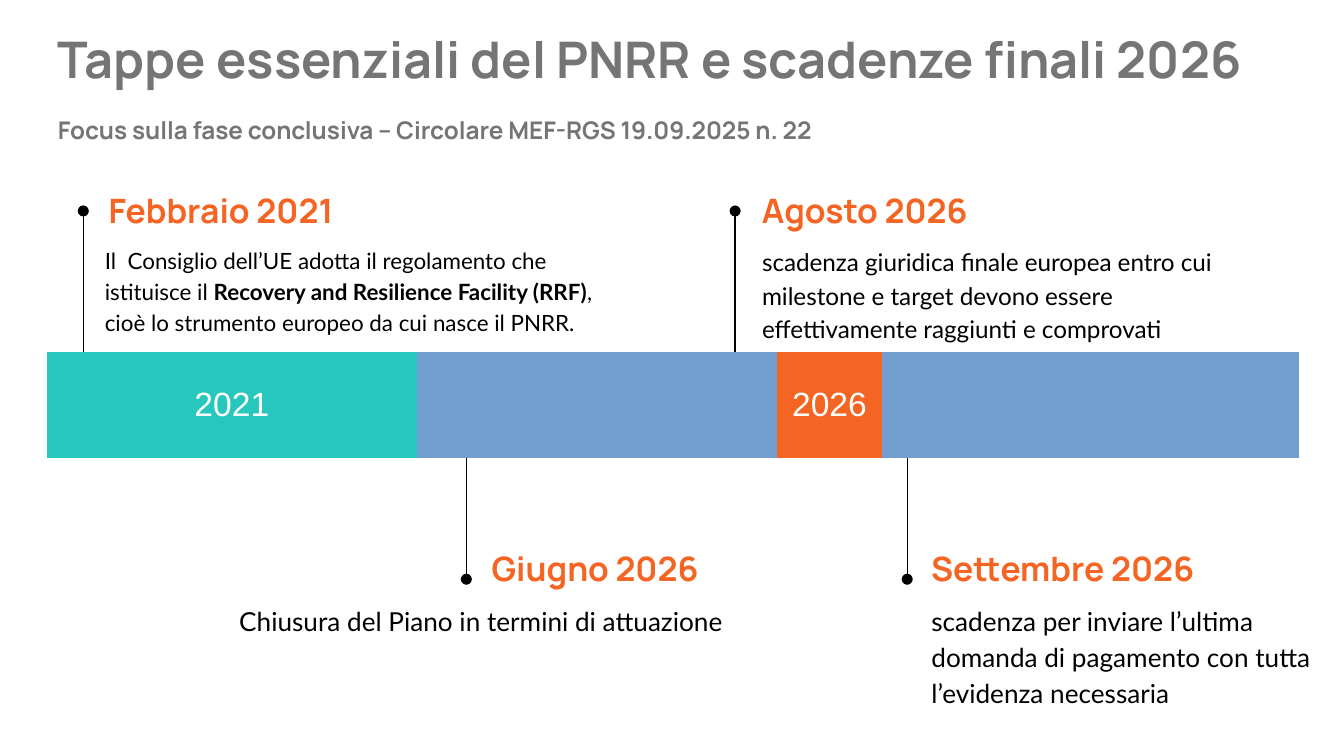
import pptx
import pptx.dml.color
import pptx.enum.shapes
import pptx.enum.text
import pptx.oxml.ns
import pptx.util
from lxml import etree

Inches, Pt = pptx.util.Inches, pptx.util.Pt
Align, Anchor = pptx.enum.text.PP_ALIGN, pptx.enum.text.MSO_ANCHOR
qn = pptx.oxml.ns.qn

GREY, ORANGE, TEAL = "757575", "F46524", "27C7BD"
BLACK, WHITE = "000000", "FFFFFF"
NO_TABLE_STYLE = "{2D5ABB26-0587-4C30-8999-92F81FD0307C}"


def rgb(value):
    return pptx.dml.color.RGBColor.from_string(value)


class Deck:
    heading_font, body_font, table_font = "Manrope", "Lato", "Arial"
    inset = Inches(0.1)

    def __init__(self, prs, layout):
        self.s = prs.slides.add_slide(prs.slide_layouts[layout])

    def place(self, sp, left, top, width, height, anchor=Anchor.TOP):
        sp.left, sp.top = Inches(left), Inches(top)
        sp.width, sp.height = Inches(width), Inches(height)
        tf = sp.text_frame
        tf.word_wrap = True
        tf.auto_size = pptx.enum.text.MSO_AUTO_SIZE.NONE
        tf.vertical_anchor = anchor
        tf.margin_left = tf.margin_right = self.inset
        tf.margin_top = tf.margin_bottom = self.inset
        return tf

    def run(self, p, text, size, font, color, bold=False):
        r = p.add_run()
        r.text = text
        r.font.size, r.font.name, r.font.bold = Pt(size), font, bold
        r.font.color.rgb = rgb(color)

    def title(self, text, subtitle):
        tf = self.place(self.s.shapes.title, 0.33, 0.11, 9.32, 0.91)
        p = tf.paragraphs[0]
        p.alignment = Align.LEFT
        self.run(p, text, 27, self.heading_font, GREY, True)
        p = tf.add_paragraph()
        p.alignment, p.line_spacing, p.space_before = Align.LEFT, 1.15, Pt(12)
        self.run(p, subtitle, 13, self.heading_font, GREY, True)

    def heading(self, text, left, top):
        sp = self.s.shapes.add_textbox(0, 0, 0, 0)
        tf = self.place(sp, left, top, 2.57, 0.43, Anchor.MIDDLE)
        self.run(tf.paragraphs[0], text, 18, self.heading_font, ORANGE, True)

    def body(self, idx, runs, size, left, top, width, height):
        tf = self.place(self.s.placeholders[idx], left, top, width, height)
        p = tf.paragraphs[0]
        p.alignment, p.line_spacing = Align.LEFT, 1.15
        p.space_before, p.space_after = Pt(0), Pt(16)
        # No bullet and no hanging indent
        pPr = p._p.get_or_add_pPr()
        pPr.set("marL", "0")
        pPr.set("indent", "0")
        etree.SubElement(pPr, qn("a:buNone"))
        for text, bold in runs:
            self.run(p, text, size, self.body_font, BLACK, bold)

    def band(self, left, top, height, widths, segments):
        frame = self.s.shapes.add_table(1, len(widths), Inches(left), Inches(top),
                                        Inches(sum(widths)), Inches(height))
        table = frame.table
        table.first_row = table.horz_banding = False
        table._tbl.tblPr.find(qn("a:tableStyleId")).text = NO_TABLE_STYLE
        for column, width in zip(table.columns, widths):
            column.width = Inches(width)
        first = 0
        for text, span, color in segments:
            cell = table.cell(0, first)
            cell.merge(table.cell(0, first + span - 1))
            cell.fill.solid()
            cell.fill.fore_color.rgb = rgb(color)
            cell.vertical_anchor = Anchor.MIDDLE
            cell.margin_left = cell.margin_right = self.inset
            cell.margin_top = cell.margin_bottom = self.inset
            p = cell.text_frame.paragraphs[0]
            p.alignment = Align.CENTER
            self.run(p, text, 18, self.table_font, WHITE)
            first += span

    def marker(self, x, start, end):
        line = self.s.shapes.add_connector(pptx.enum.shapes.MSO_CONNECTOR.STRAIGHT,
                                           Inches(x), Inches(start), Inches(x), Inches(end))
        line.line.color.rgb = rgb(BLACK)
        line.line.width = Pt(0.75)
        etree.SubElement(line.line._get_or_add_ln(), qn("a:tailEnd"), type="oval")
        etree.SubElement(line._element.spPr, qn("a:effectLst"))


def main():
    prs = pptx.Presentation()
    prs.slide_width = Inches(10)
    prs.slide_height = prs.slide_width * 9 // 16
    deck = Deck(prs, 4)  # title and four body placeholders

    deck.title("Tappe essenziali del PNRR e scadenze finali 2026",
               "Focus sulla fase conclusiva – Circolare MEF-RGS 19.09.2025 n. 22")

    # Timeline band: ten equal columns around a narrow and a wide one
    top, height = 2.62, 0.79
    narrow, wide = 0.42, 1.13
    step = (9.32 - narrow - wide) / 10
    widths = [step] * 3 + [narrow, wide] + [step] * 7
    deck.band(0.35, top, height, widths, [("2021", 4, TEAL), ("2026", 8, ORANGE)])

    # Milestones: above?, marker x, heading, heading left, runs, size, body left, width, height
    milestones = [
        (True, 0.62, "Febbraio 2021", 0.71,
         [("Il  Consiglio dell’UE adotta il regolamento che istituisce il ", False),
          ("Recovery and Resilience Facility (RRF)", True),
          (", cioè lo strumento europeo da cui nasce il PNRR.", False)],
         12, 0.68, 3.93, 0.91),
        (False, 3.47, "Giugno 2026", 3.56,
         [("Chiusura del Piano in termini di attuazione", False)],
         14, 1.68, 4.41, 0.63),
        (True, 5.47, "Agosto 2026", 5.57,
         [("scadenza giuridica finale europea entro cui milestone e target devono "
           "essere effettivamente raggiunti e comprovati", False)],
         13, 5.57, 3.93, 0.63),
        (False, 6.75, "Settembre 2026", 6.83,
         [("scadenza per inviare l’ultima domanda di pagamento con tutta "
           "l’evidenza necessaria", False)],
         14, 6.83, 3.09, 0.63),
    ]
    for idx, milestone in enumerate(milestones, start=1):
        above, x, name, name_left, runs, size, left, width, box_height = milestone
        name_top = 1.35 if above else 4.01
        if above:
            deck.marker(x, top, 1.57)
        else:
            deck.marker(x, top + height, 4.31)
        deck.heading(name, name_left, name_top)
        deck.body(idx, runs, size, left, name_top + 0.36, width, box_height)

    prs.save("out.pptx")


if __name__ == "__main__":
    main()
